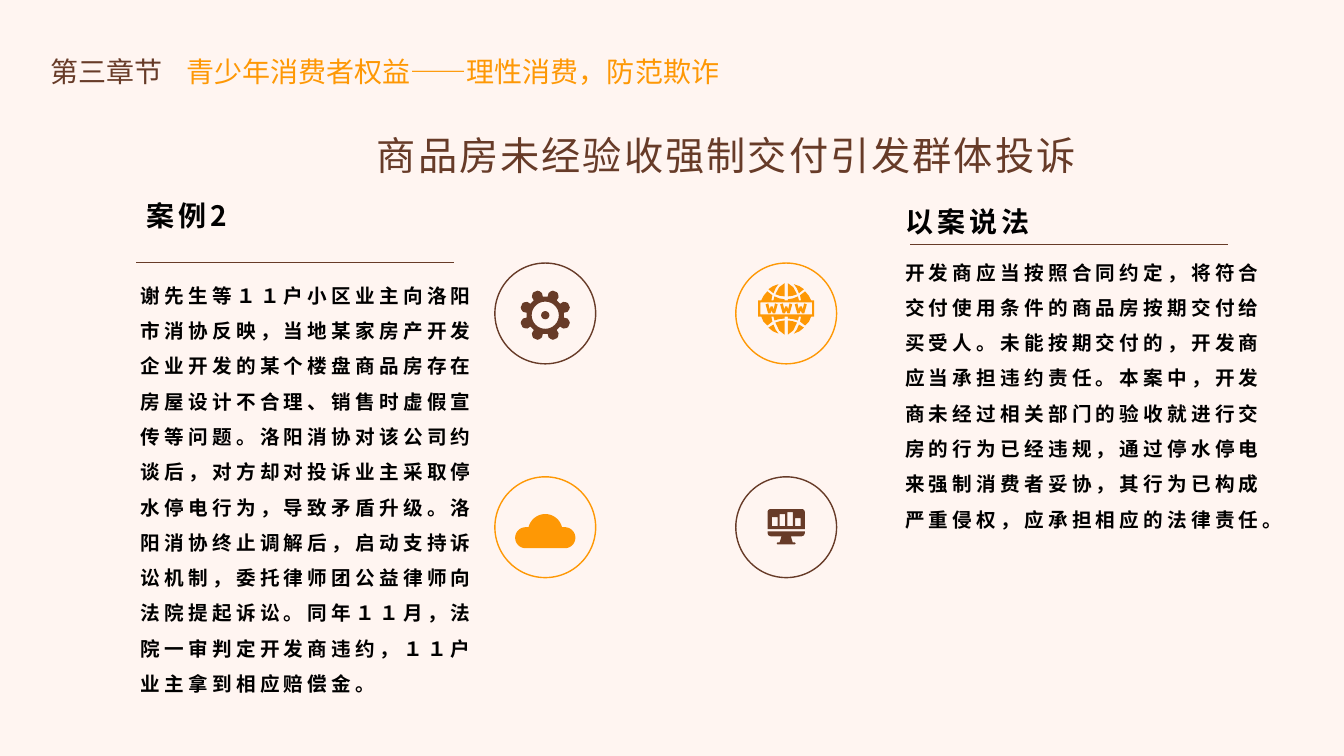
import math
import pptx
import pptx.dml.color
import pptx.enum.shapes
import pptx.enum.text
import pptx.oxml.ns
import pptx.util

# Content
FONT = "Noto Sans CJK SC"
HUES = {"back": "FFF5F1", "brown": "673B28", "gold": "FE9805", "black": "000000"}
CASE = (
    "谢先生等１１户小区业主向洛阳市消协反映，当地某家房产开发企业开发的某个楼盘商品房存在"
    "房屋设计不合理、销售时虚假宣传等问题。洛阳消协对该公司约谈后，对方却对投诉业主采取停"
    "水停电行为，导致矛盾升级。洛阳消协终止调解后，启动支持诉讼机制，委托律师团公益律师向"
    "法院提起诉讼。同年１１月，法院一审判定开发商违约，１１户业主拿到相应赔偿金。"
)
LAW = (
    "开发商应当按照合同约定，将符合交付使用条件的商品房按期交付给买受人。未能按期交付的，"
    "开发商应当承担违约责任。本案中，开发商未经过相关部门的验收就进行交房的行为已经违规，"
    "通过停水停电来强制消费者妥协，其行为已构成严重侵权，应承担相应的法律责任。"
)
# text, left, top, width, height, size, hue, spacing, bold
HEADS = [
    ("青少年消费者权益——理性消费，防范欺诈", 126, 35.3, 504, 31.7, 20, "gold", 0, False),
    ("第三章节", 28.8, 35.3, 98.6, 31.7, 20, "brown", 0, False),
    ("商品房未经验收强制交付引发群体投诉", 262.1, 90, 584.6, 41, 28, "brown", 1.5, False),
    ("以案说法", 639.4, 142.6, 107.3, 31.7, 20, "black", 3, True),
    ("案例2", 97.2, 138.2, 107.3, 31.7, 20, "black", 3, True),
]
BODIES = [
    (CASE, 93.6, 190.8, 257, 316.8, 14, "black", 3, True),
    (LAW, 639.4, 174.2, 280.1, 304.6, 14, "black", 3, True),
]
RULES = [(97.2, 187.2), (650.2, 174.2)]
RULE_W = 226.8
RING = 72
COLS, ROWS = (389.5, 561.6), (223.9, 376.6)


def arc(x, y, r, start=0, end=360, count=32):
    turns = [math.radians(start + (end - start) * i / count) for i in range(count + 1)]
    return [(x + r * math.cos(t), y + r * math.sin(t)) for t in turns]


def box(x, y, w, h):
    return [(x, y), (x + w, y), (x + w, y + h), (x, y + h)]


def flip(points):
    return [(-x, y) for x, y in reversed(points)]


# Icon outlines, in points from the ring centre
def gear():
    tooth = [(-15, 13.4), (-14, 16), (-9, 17.6), (-5, 18.4),
             (5, 18.4), (9, 17.6), (14, 16), (15, 13.4)]
    edge = []
    for k in range(8):
        for turn, r in tooth:
            t = math.radians(22.5 + 45 * k + turn)
            edge.append((r * math.cos(t), 1.3 + r * math.sin(t)))
    return [edge, arc(0, 1.3, 9.7), arc(0, 1.3, 2.9)]


def globe():
    parts = [
        [(9.1, 7.9), (12.7, 10.1), (9.5, 12.7), (5.5, 14.4), (7.6, 11.5)],
        [(1.2, 5), (4.5, 5.5), (7.7, 6.5), (5, 12.2), (1.2, 15.1)],
        [(10.6, 2.2), (17.8, 2.2), (16.3, 5.8), (13.5, 8.6), (9.9, 5.8)],
        [(1.2, 2.2), (9.1, 2.2), (8.4, 5), (5, 4), (1.2, 3.6)],
        [(5.5, -20.9), (9.5, -19.5), (12.7, -17.3), (9.1, -14.4), (7.6, -18)],
        [(1.2, -21.6), (5, -18.8), (7.7, -13.7), (4.5, -12.6), (1.2, -12.2)],
    ]
    half = [(1.2, -9.4), (1.2, -10.1), (5, -10.8), (8.4, -12.2), (9.1, -9.4),
            (10.6, -9.4), (9.9, -13), (13.5, -15.8), (16.2, -12.6),
            (17.8, -9.4), (20, -9.4), (20, 2.2)]
    stroke = [(-0.9, 0), (-2.5, 0), (-4.3, -6.5), (-2.4, -7.2), (-1.4, -2.9), (-0.7, -5)]
    sign = [(0, -2.2)] + stroke + flip(stroke)
    signs = [[(x + 10.4 * k, y) for x, y in sign] for k in (-1, 0, 1)]
    frame = [flip(half) + half, box(-18.5, -7.9, 37, 8.6)]
    return parts + [flip(p) for p in parts] + frame + signs


def screen():
    top = (arc(-11.1, -10.8, 2.2, 180, 270, 6) + arc(11.1, -10.8, 2.2, 270, 360, 6)
           + [(13.3, 1.4), (-13.3, 1.4)])
    bars = [box(-10.2 + 5.5 * k, y, 4, -0.7 - y)
            for k, y in enumerate((-7.2, -9.4, -10.8, -6.5))]
    half = [(13.3, 2.9), (13.3, 4.3), (12.7, 5.8), (11.1, 6.5), (3.3, 6.5),
            (4.7, 10.8), (6.2, 10.8), (6.8, 11.5), (6.2, 12.2)]
    return [top] + bars + [half + flip(half)]


def cloud():
    return [arc(-14, 7.5, 7.5, 90, 270) + arc(0, 2.9, 12.3, 194, 346)
            + arc(14, 7.5, 7.5, -90, 90)]


# column, row, hue, outlines
ICONS = [(0, 0, "brown", gear()), (1, 0, "gold", globe()),
         (1, 1, "brown", screen()), (0, 1, "gold", cloud())]


def tint(name):
    return pptx.dml.color.RGBColor.from_string(HUES[name])


def write(text, left, top, width, height, size, hue, gap, bold, lead=None):
    frame = slide.shapes.add_textbox(*map(pptx.util.Pt, (left, top, width, height))).text_frame
    frame.word_wrap = True
    if lead is None:
        frame.auto_size = pptx.enum.text.MSO_AUTO_SIZE.SHAPE_TO_FIT_TEXT
    para = frame.paragraphs[0]
    para.text = text
    para.line_spacing = lead
    font = para.font
    font.name, font.size, font.bold = FONT, pptx.util.Pt(size), bold
    font.color.rgb = tint(hue)
    # East Asian face and letter spacing
    props = para._p.get_or_add_pPr().get_or_add_defRPr()
    props.set("spc", str(int(gap * 100)))
    face = pptx.oxml.ns.qn("a:ea")
    props.append(props.makeelement(face, {"typeface": FONT}))


def draw(outlines, x, y, hue):
    spots = [[(pptx.util.Pt(x + a), pptx.util.Pt(y + b)) for a, b in line]
             for line in outlines]
    build = slide.shapes.build_freeform(*spots[0][0], scale=1.0)
    for i, line in enumerate(spots):
        if i:
            build.move_to(*line[0])
        build.add_line_segments(line[1:], close=True)
    shape = build.convert_to_shape()
    shape.shadow.inherit = False
    shape.fill.solid()
    shape.fill.fore_color.rgb = tint(hue)
    shape.line.fill.background()


# Slide
deck = pptx.Presentation()
deck.slide_width, deck.slide_height = pptx.util.Pt(960), pptx.util.Pt(540)
slide = deck.slides.add_slide(deck.slide_layouts[6])
slide.background.fill.solid()
slide.background.fill.fore_color.rgb = tint("back")

# Headings and body text
for head in HEADS:
    write(*head)
for body in BODIES:
    write(*body, lead=1.5)

# Rules under the headings
for x, y in RULES:
    rule = slide.shapes.add_connector(
        pptx.enum.shapes.MSO_CONNECTOR.STRAIGHT,
        *map(pptx.util.Pt, (x, y, x + RULE_W, y)))
    rule.line.color.rgb = tint("brown")
    rule.line.width = pptx.util.Pt(0.25)
    props = rule._element.spPr
    props.append(props.makeelement(pptx.oxml.ns.qn("a:effectLst"), {}))

# Ringed icons
for col, row, hue, outlines in ICONS:
    x, y = COLS[col], ROWS[row]
    ring = slide.shapes.add_shape(
        pptx.enum.shapes.MSO_SHAPE.OVAL,
        *map(pptx.util.Pt, (x - RING / 2, y - RING / 2, RING, RING)))
    ring.shadow.inherit = False
    ring.fill.background()
    ring.line.color.rgb = tint(hue)
    ring.line.width = pptx.util.Pt(1)
    draw(outlines, x, y, hue)

deck.save("out.pptx")
